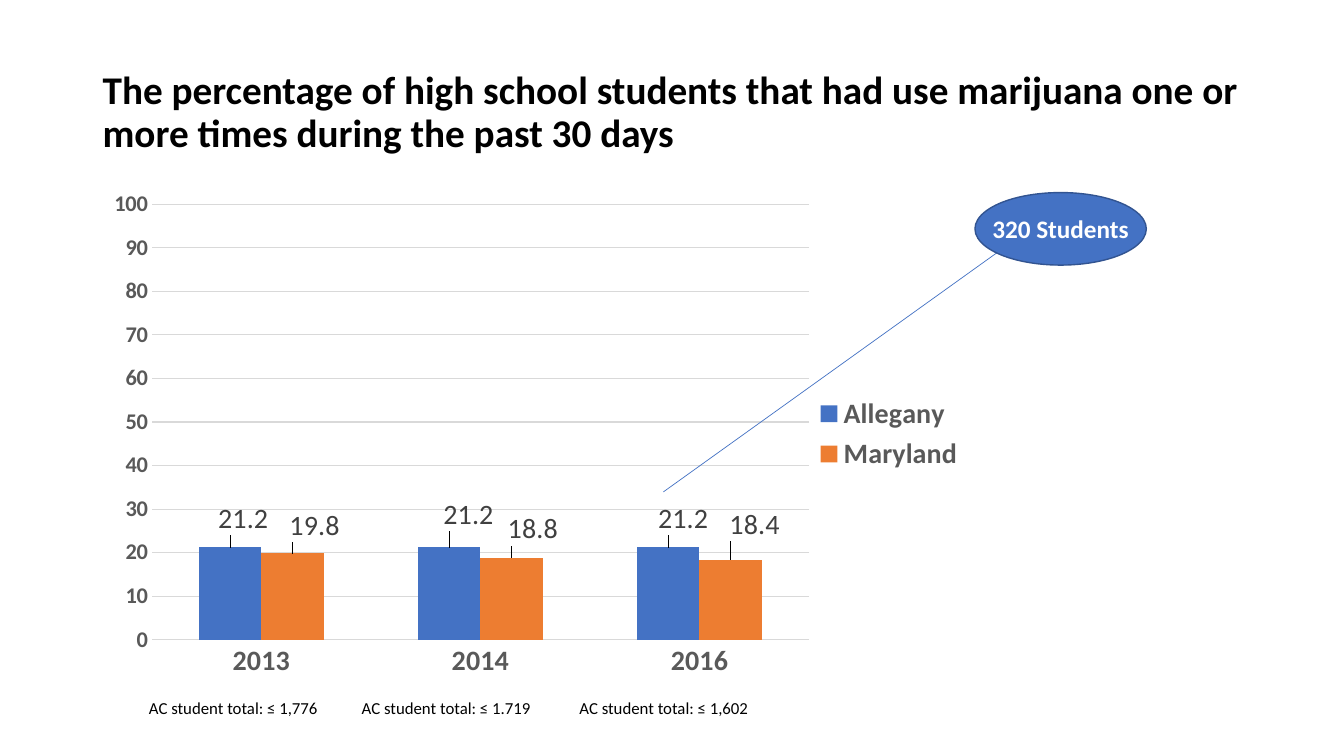
from lxml.etree import SubElement
from pptx import Presentation
from pptx.chart.data import CategoryChartData
from pptx.dml.color import RGBColor
from pptx.enum.chart import XL_CHART_TYPE, XL_LABEL_POSITION, XL_LEGEND_POSITION, XL_TICK_MARK
from pptx.enum.shapes import MSO_CONNECTOR, MSO_SHAPE
from pptx.enum.text import MSO_ANCHOR, PP_ALIGN
from pptx.oxml.ns import qn
from pptx.util import Inches, Pt

FONT = "Calibri"
BLUE, ORANGE = "4472C4", "ED7D31"
BLACK, WHITE, GREY = "000000", "FFFFFF", "595959"

YEARS = ["2013", "2014", "2016"]
SERIES = [
    ("Allegany", BLUE, [21.2, 21.2, 21.2],
     [(0.015, -0.015), (0.022, -0.023), (0.017, -0.015)]),
    ("Maryland", ORANGE, [19.8, 18.8, 18.4],
     [(0.025, -0.013), (0.024, -0.015), (0.027, -0.027)]),
]
TOTALS = [(10.35, "1,776"), (26.18, "1.719"), (42.38, "1,602")]


def color(value):
    return RGBColor.from_string(value)


def style_font(font, size, hue, bold=False):
    font.name, font.size, font.bold = FONT, Pt(size), bold
    font.color.rgb = color(hue)


def manual_layout(parent, **settings):
    layout = SubElement(parent, qn("c:layout"))
    manual = SubElement(layout, qn("c:manualLayout"))
    for name, value in settings.items():
        SubElement(manual, qn(f"c:{name}")).set("val", str(value))
    return layout


class SlideBuilder:
    def __init__(self, deck):
        self.width, self.height = deck.slide_width, deck.slide_height
        self.page = deck.slides.add_slide(deck.slide_layouts[6])

    def across(self, percent):
        return int(self.width * percent / 100)

    def down(self, percent):
        return int(self.height * percent / 100)

    def frame(self, left, top, width, height):
        return self.across(left), self.down(top), self.across(width), self.down(height)

    def text(self, area, words, size, hue=BLACK, bold=False, align=PP_ALIGN.LEFT,
             anchor=MSO_ANCHOR.TOP, spacing=1.0):
        box = self.page.shapes.add_textbox(*self.frame(*area))
        frame = box.text_frame
        frame.word_wrap = True
        frame.vertical_anchor = anchor
        frame.text = words
        para = frame.paragraphs[0]
        para.alignment, para.line_spacing = align, spacing
        style_font(para.runs[0].font, size, hue, bold)

    def ellipse(self, area, fill, outline):
        oval = self.page.shapes.add_shape(MSO_SHAPE.OVAL, *self.frame(*area))
        oval.shadow.inherit = False
        oval.fill.solid()
        oval.fill.fore_color.rgb = color(fill)
        oval.line.color.rgb = color(outline)
        oval.line.width = Pt(1)

    def line(self, start, end, hue, weight):
        connector = self.page.shapes.add_connector(
            MSO_CONNECTOR.STRAIGHT, self.across(start[0]), self.down(start[1]),
            self.across(end[0]), self.down(end[1]))
        connector.line.color.rgb = color(hue)
        connector.line.width = Pt(weight)
        SubElement(connector._element.spPr, qn("a:effectLst"))

    def column_chart(self, area, categories, series_rows):
        data = CategoryChartData()
        data.categories = categories
        for name, _, values, _ in series_rows:
            data.add_series(name, values)
        chart = self.page.shapes.add_chart(
            XL_CHART_TYPE.COLUMN_CLUSTERED, *self.frame(*area), data).chart
        style_font(chart.font, 10, BLACK)
        chart.has_title = False
        chart.has_legend = True
        chart.legend.position = XL_LEGEND_POSITION.RIGHT
        chart.legend.include_in_layout = False
        style_font(chart.legend.font, 20, GREY, True)
        self.axes(chart)
        plot = chart.plots[0]
        plot.gap_width, plot.overlap = 150, 0
        plot.vary_by_categories = False
        for series, (_, hue, _, offsets) in zip(plot.series, series_rows):
            series.format.fill.solid()
            series.format.fill.fore_color.rgb = color(hue)
            self.value_labels(series, offsets)
        plot_area = chart._chartSpace.chart.plotArea
        for layout in plot_area.findall(qn("c:layout")):
            plot_area.remove(layout)
        plot_area.insert(0, manual_layout(
            plot_area, layoutTarget="inner", xMode="edge", yMode="edge",
            x=0.067, y=0.056, w=0.745, h=0.842))

    def axes(self, chart):
        for axis, size in ((chart.category_axis, 20), (chart.value_axis, 16)):
            axis.major_tick_mark = axis.minor_tick_mark = XL_TICK_MARK.NONE
            axis.format.line.fill.background()
            style_font(axis.tick_labels.font, size, GREY, True)
        values = chart.value_axis
        values.minimum_scale, values.maximum_scale, values.major_unit = 0, 100, 10
        values.has_major_gridlines = True
        grid = values.major_gridlines.format.line
        grid.color.rgb, grid.width = color("D9D9D9"), Pt(0.75)

    def value_labels(self, series, offsets):
        labels = series.data_labels
        labels.show_value = True
        labels.position = XL_LABEL_POSITION.OUTSIDE_END
        style_font(labels.font, 20, "404040")
        for index in range(len(offsets)):
            label = series.points[index].data_label
            label.position = XL_LABEL_POSITION.OUTSIDE_END
            style_font(label.font, 20, "404040")
        for element, (x, y) in zip(labels._element.findall(qn("c:dLbl")), offsets):
            element.insert(1, manual_layout(element, x=x, y=y))


def main():
    deck = Presentation()
    deck.slide_width, deck.slide_height = Inches(13.33), Inches(7.5)
    slide = SlideBuilder(deck)
    slide.text((6.9, 5.33, 86.27, 19.33),
               "The percentage of high school students that had use marijuana one or "
               "more times during the past 30 days",
               28, bold=True, anchor=MSO_ANCHOR.MIDDLE, spacing=0.9)
    slide.column_chart((6.9, 23.2, 65.64, 68.4), YEARS, SERIES)
    slide.line((49.36, 65.07), (74.57, 32.93), BLUE, 0.5)
    slide.ellipse((72.54, 25.47, 12.75, 9.6), BLUE, "325491")
    slide.text((72.54, 27.6, 12.75, 5.33), "320 Students", 18, WHITE, True, PP_ALIGN.CENTER)
    for left, total in TOTALS:
        slide.text((left, 91.6, 14.4, 4), f"AC student total: ≤ {total}", 12)
    deck.save("out.pptx")


if __name__ == "__main__":
    main()
